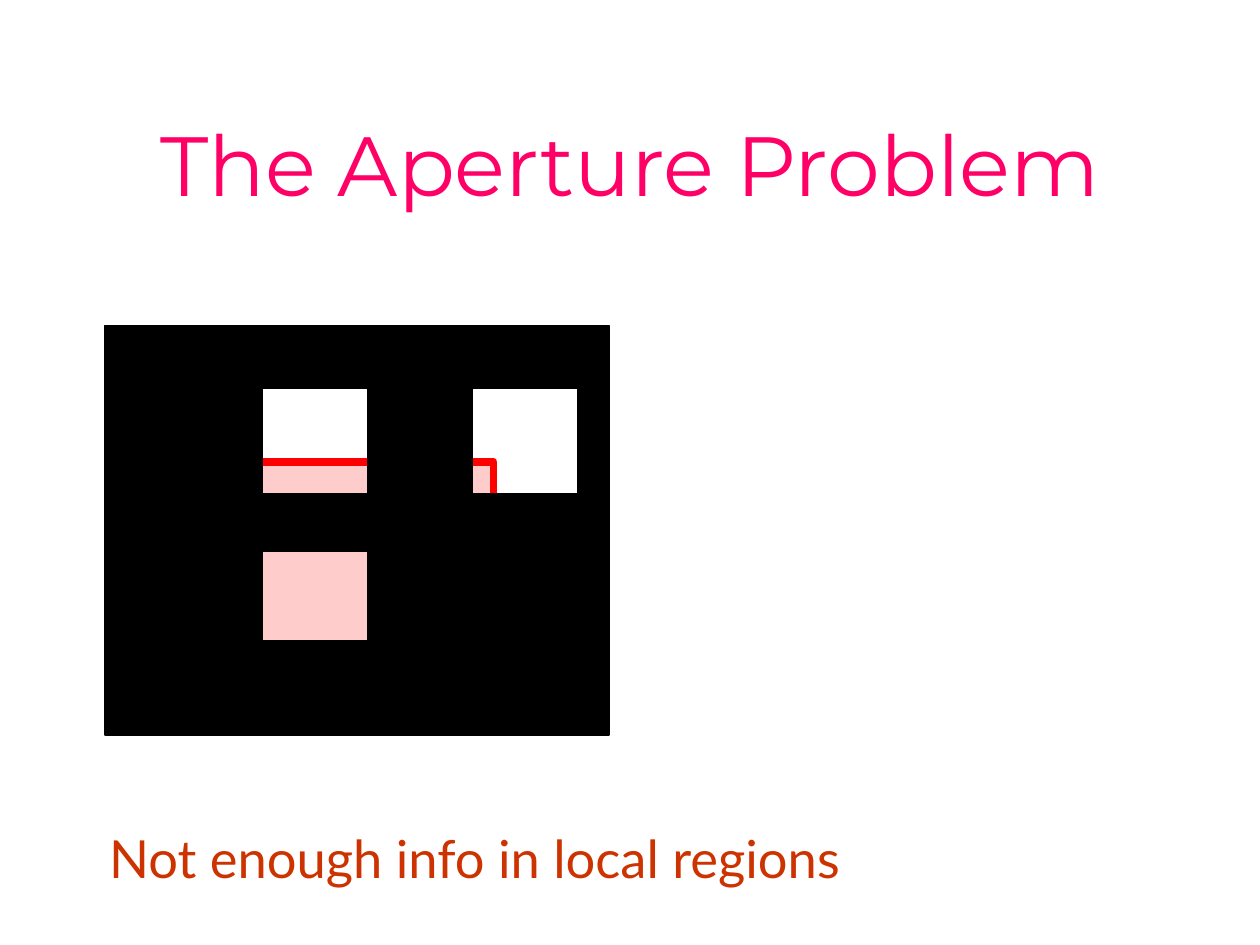
"""Build the aperture problem slide on a grid of 120 columns by 90 rows."""
import dataclasses
import typing

import pptx
import pptx.dml.color
import pptx.enum.shapes
import pptx.enum.text
import pptx.util

COLS, ROWS = 120, 90
ALIGN = pptx.enum.text.PP_ALIGN
ANCHOR = pptx.enum.text.MSO_ANCHOR


@dataclasses.dataclass(frozen=True)
class Box:
    col: float
    row: float
    wide: float
    high: float


@dataclasses.dataclass(frozen=True)
class Label:
    box: Box
    text: str
    size: float
    font: str
    hue: str
    frame: dict[str, typing.Any]
    para: dict[str, typing.Any]


PATCH = Box(19, 44, 28, 23)
MASKS = (
    Box(10, 31, 15, 39),
    Box(35, 31, 10, 39),
    Box(21, 47, 37, 5.5),
    Box(20, 31, 38, 6),
    Box(55, 35, 3, 14),
    Box(20, 61, 38, 9),
    Box(41, 51.6, 17, 14),
)
LABELS = (
    Label(Box(9, 8, 102, 15), "The Aperture Problem", 48, "Montserrat", "FF0066",
          {"vertical_anchor": ANCHOR.MIDDLE}, {"alignment": ALIGN.CENTER}),
    Label(Box(5.2, 78.1, 76, 7.2), "Not enough info in local regions", 30, "Lato", "CC3300",
          {"vertical_anchor": ANCHOR.TOP}, {"alignment": ALIGN.RIGHT}),
)


def tint(code: str) -> pptx.dml.color.RGBColor:
    return pptx.dml.color.RGBColor.from_string(code)


def apply(item: typing.Any, form: dict[str, typing.Any]) -> None:
    for name, value in form.items():
        setattr(item, name, value)


def place(deck: typing.Any, box: Box) -> tuple[int, int, int, int]:
    x, y = deck.slide_width / COLS, deck.slide_height / ROWS
    return round(box.col * x), round(box.row * y), round(box.wide * x), round(box.high * y)


def draw_box(deck: typing.Any, shapes: typing.Any, box: Box,
             fill: str, edge: str, width: float) -> None:
    kind = pptx.enum.shapes.MSO_SHAPE.RECTANGLE
    shape = shapes.add_shape(kind, *place(deck, box))
    shape.shadow.inherit = False
    shape.fill.solid()
    shape.fill.fore_color.rgb = tint(fill)
    shape.line.color.rgb = tint(edge)
    shape.line.width = pptx.util.Pt(width)


def draw_label(deck: typing.Any, shapes: typing.Any, label: Label) -> None:
    frame = shapes.add_textbox(*place(deck, label.box)).text_frame
    apply(frame, {"word_wrap": True, **label.frame})
    para = frame.paragraphs[0]
    apply(para, label.para)
    run = para.add_run()
    run.text = label.text
    apply(run.font, {"size": pptx.util.Pt(label.size), "name": label.font})
    run.font.color.rgb = tint(label.hue)


def main() -> None:
    deck = pptx.Presentation()
    apply(deck, {"slide_width": pptx.util.Inches(10), "slide_height": pptx.util.Inches(7.5)})
    shapes = deck.slides.add_slide(deck.slide_layouts[6]).shapes
    draw_box(deck, shapes, PATCH, "FFCCCC", "FF0000", 4.5)
    group = shapes.add_group_shape()
    for mask in MASKS:
        draw_box(deck, group.shapes, mask, "000000", "000000", 0.75)
    for label in LABELS:
        draw_label(deck, shapes, label)
    deck.save("out.pptx")


if __name__ == "__main__":
    main()
